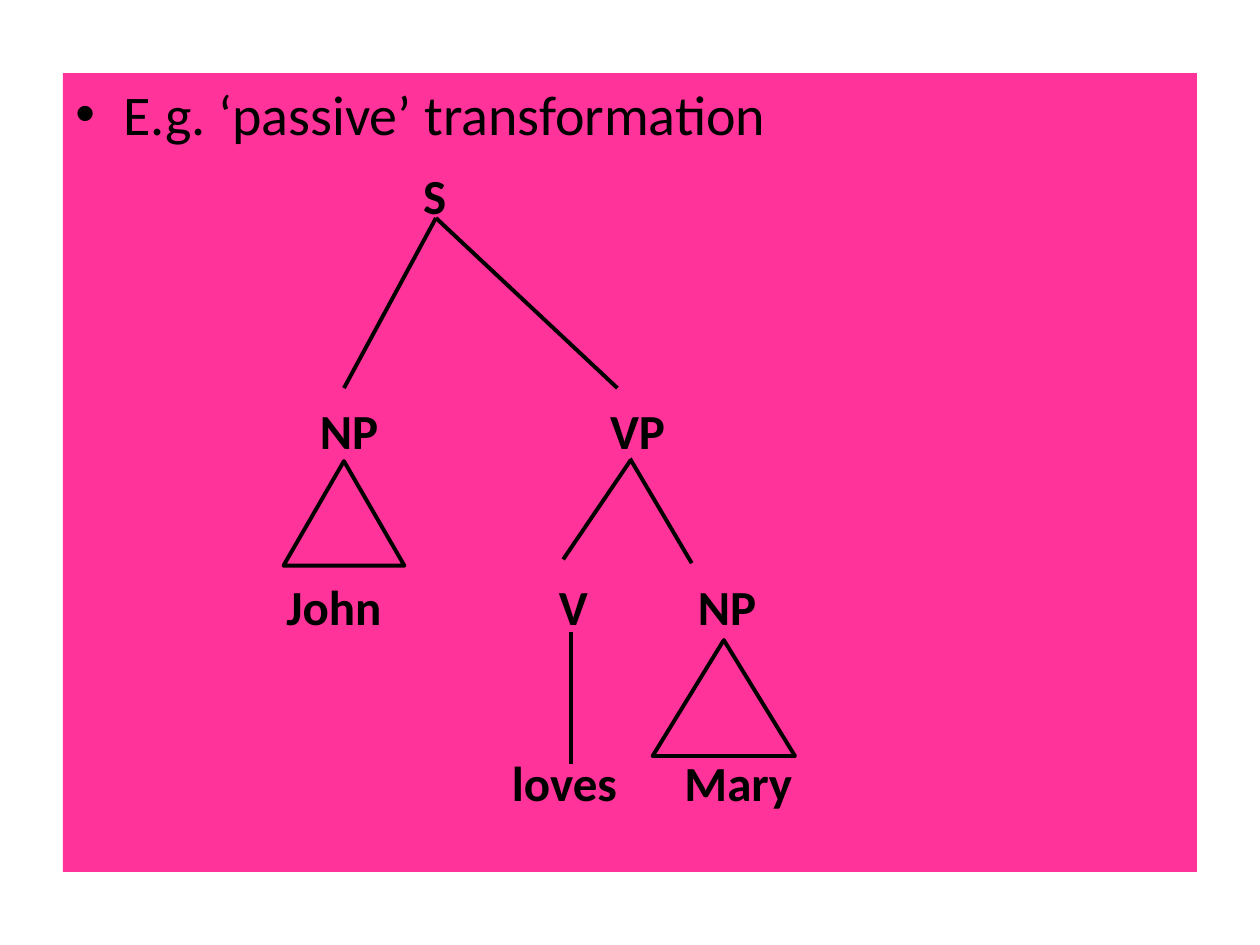
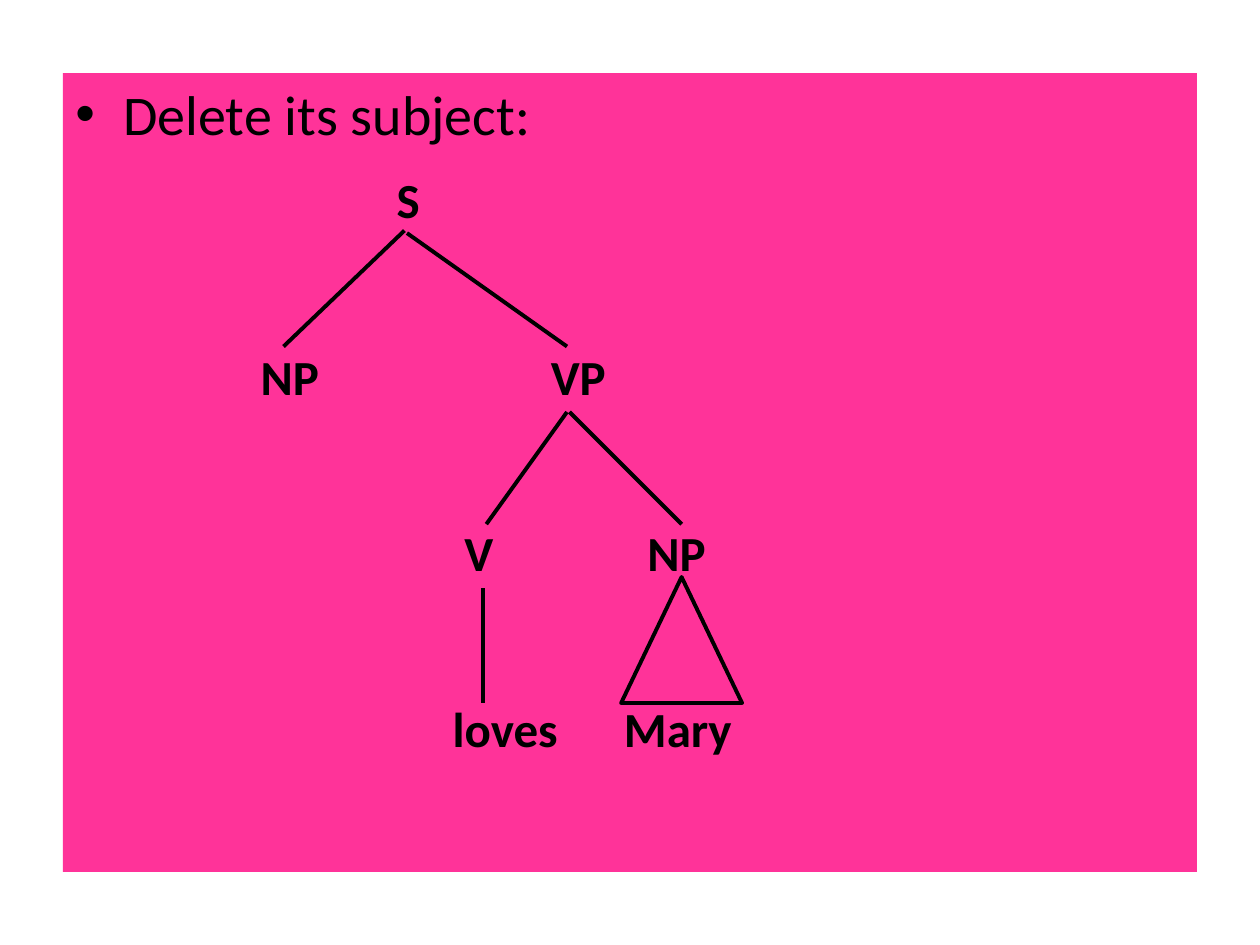
from lxml import etree
from pptx import Presentation
from pptx.dml.color import RGBColor
from pptx.enum.shapes import MSO_CONNECTOR, MSO_SHAPE
from pptx.enum.text import MSO_ANCHOR, PP_ALIGN
from pptx.oxml.ns import qn
from pptx.util import Inches, Pt

RECTANGLE = MSO_SHAPE.RECTANGLE
TRIANGLE = MSO_SHAPE.ISOSCELES_TRIANGLE
STRAIGHT = MSO_CONNECTOR.STRAIGHT
TOP, MIDDLE = MSO_ANCHOR.TOP, MSO_ANCHOR.MIDDLE
LEFT, CENTER = PP_ALIGN.LEFT, PP_ALIGN.CENTER

PASSIVE_TREE = {
    "heading": "E.g. ‘passive’ transformation",
    "rows": [
        (1.55, [("S", 3.45)]),
        (3.41, [("NP", 2.77), ("VP", 5.06)]),
        (4.81, [("John", 2.65), ("V", 4.55), ("NP", 5.77)]),
        (6.21, [("loves", 4.48), ("Mary", 5.86)]),
    ],
    "branches": [
        (3.46, 1.73, 2.73, 3.08),
        (3.46, 1.73, 4.9, 3.08),
        (5, 3.66, 4.47, 4.44),
        (5, 3.64, 5.49, 4.47),
        (4.53, 5.02, 4.53, 6.06),
    ],
    "triangles": [(2.25, 3.66, 0.96, 0.83), (5.18, 5.08, 1.13, 0.92)],
}

SUBJECTLESS_TREE = {
    "heading": "Delete its subject:",
    "rows": [
        (1.58, [("S", 3.24)]),
        (2.98, [("NP", 2.3), ("VP", 4.59)]),
        (4.38, [("V", 3.8), ("NP", 5.37)]),
        (5.78, [("loves", 4.01), ("Mary", 5.38)]),
    ],
    "branches": [
        (3.21, 1.83, 2.25, 2.75),
        (3.23, 1.85, 4.5, 2.75),
        (4.5, 3.27, 3.86, 4.16),
        (4.52, 3.27, 5.41, 4.16),
        (3.83, 4.67, 3.83, 5.58),
    ],
    "triangles": [(4.93, 4.58, 0.96, 1)],
}


def color(value):
    return RGBColor.from_string(value)


class TreeDeck:
    font = "Calibri"
    ink = "000000"
    panel_fill = "FF3399"
    line_width = Pt(2.25)
    label_width, label_height = 1.2, 0.5

    def __init__(self):
        self.presentation = Presentation()
        self.presentation.slide_width = Inches(10)
        self.presentation.slide_height = Inches(7.5)
        self.slide = None

    def add_slide(self):
        layout = self.presentation.slide_layouts[6]
        self.slide = self.presentation.slides.add_slide(layout)

    def add_text(self, shape, text, size, bold, alignment, anchor):
        frame = shape.text_frame
        frame.word_wrap = True
        frame.vertical_anchor = anchor
        paragraph = frame.paragraphs[0]
        paragraph.alignment = alignment
        run = paragraph.add_run()
        run.text = text
        run.font.name = self.font
        run.font.size = Pt(size)
        run.font.bold = bold
        run.font.color.rgb = color(self.ink)
        return paragraph

    def panel(self, heading):
        shape = self.slide.shapes.add_shape(
            RECTANGLE, Inches(0.5), Inches(0.58), Inches(9), Inches(6.34))
        shape.shadow.inherit = False
        shape.fill.solid()
        shape.fill.fore_color.rgb = color(self.panel_fill)
        shape.line.fill.background()
        paragraph = self.add_text(shape, heading, 32, False, LEFT, TOP)
        properties = paragraph._p.get_or_add_pPr()
        properties.set("marL", str(Inches(0.38)))
        properties.set("indent", str(Inches(-0.38)))
        etree.SubElement(properties, qn("a:buFont")).set("typeface", "Arial")
        etree.SubElement(properties, qn("a:buChar")).set("char", "•")

    def label(self, text, center_x, center_y):
        shape = self.slide.shapes.add_textbox(
            Inches(center_x - self.label_width / 2),
            Inches(center_y - self.label_height / 2),
            Inches(self.label_width), Inches(self.label_height))
        self.add_text(shape, text, 28, True, CENTER, MIDDLE)

    def outline(self, line):
        line.color.rgb = color(self.ink)
        line.width = self.line_width

    def branch(self, *ends):
        connector = self.slide.shapes.add_connector(STRAIGHT, *map(Inches, ends))
        self.outline(connector.line)
        etree.SubElement(connector._element.spPr, qn("a:effectLst"))

    def triangle(self, *bounds):
        shape = self.slide.shapes.add_shape(TRIANGLE, *map(Inches, bounds))
        shape.shadow.inherit = False
        shape.fill.background()
        self.outline(shape.line)

    def tree(self, content):
        self.add_slide()
        self.panel(content["heading"])
        for center_y, labels in content["rows"]:
            for text, center_x in labels:
                self.label(text, center_x, center_y)
        for ends in content["branches"]:
            self.branch(*ends)
        for bounds in content["triangles"]:
            self.triangle(*bounds)


def main():
    deck = TreeDeck()
    for content in (PASSIVE_TREE, SUBJECTLESS_TREE):
        deck.tree(content)
    deck.presentation.save("out.pptx")


if __name__ == "__main__":
    main()
